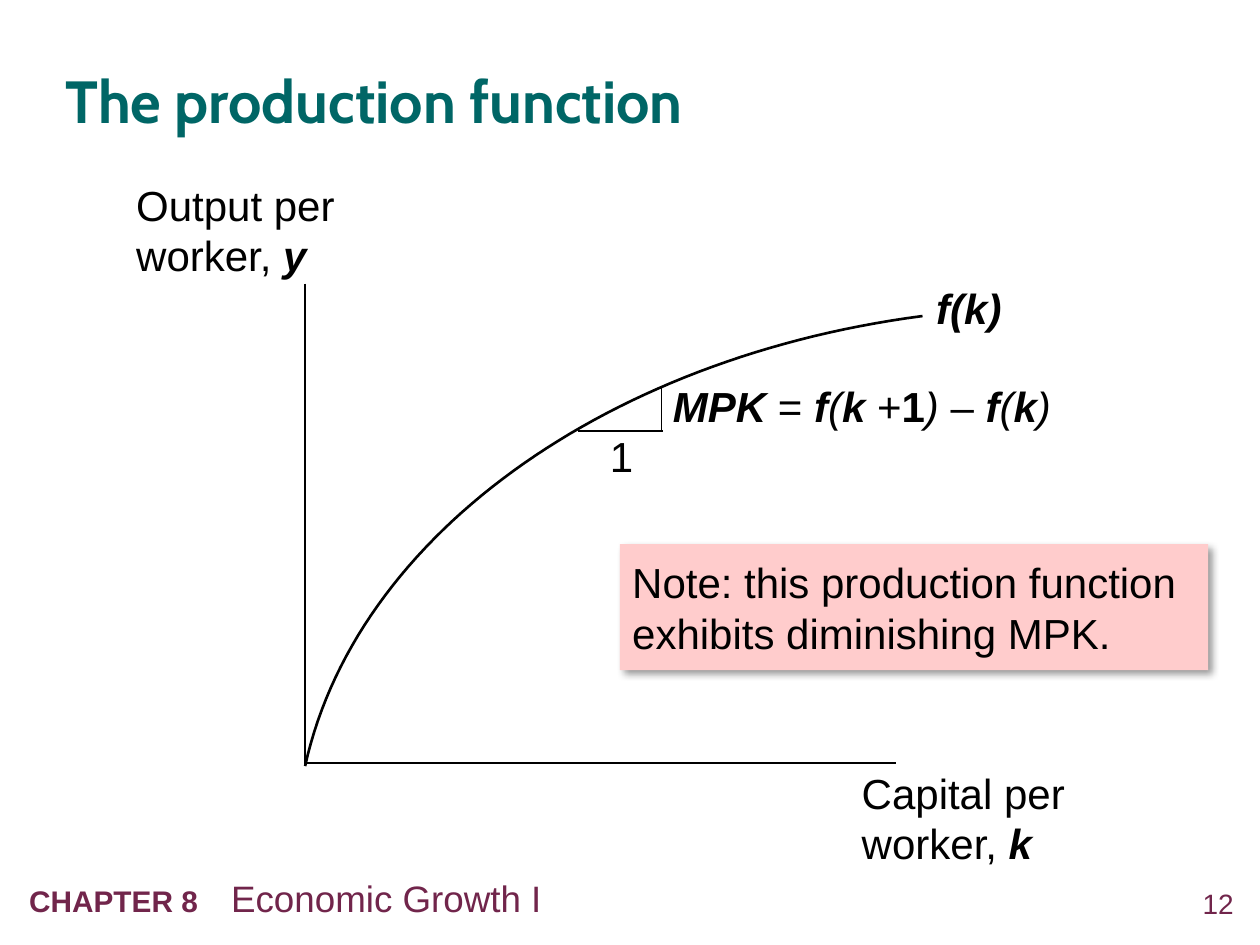
from dataclasses import dataclass

from lxml import etree
from pptx import Presentation
from pptx import util as u
from pptx.dml import color
from pptx.enum import shapes, text
from pptx.oxml import ns


@dataclass(frozen=True)
class Theme:
    ink: str = "000000"
    teal: str = "006666"
    plum: str = "71254B"
    pink: str = "FFCCCC"
    head: str = "Cabin"
    face: str = "Arial"
    title: int = 34
    body: int = 24
    foot: int = 21
    mark: int = 17
    page: int = 16


def rgb(code):
    return color.RGBColor.from_string(code)


def add(node, tag, **attrs):
    return etree.SubElement(node, ns.qn(tag), attrs)


class Deck:
    def __init__(self, theme):
        self.theme = theme
        self.file = Presentation()
        self.file.slide_width = u.Pt(720)
        self.file.slide_height = u.Pt(540)
        self.slide = self.file.slides.add_slide(self.file.slide_layouts[5])

    def run(self, para, words, style="", size=None, tint=None, face=None):
        run = para.add_run()
        run.text = words
        font = run.font
        font.name = face or self.theme.face
        font.size = u.Pt(size or self.theme.body)
        font.bold = "b" in style
        font.italic = "i" in style
        font.color.rgb = rgb(tint or self.theme.ink)

    def frame(self, shape, inset=0, anchor=text.MSO_ANCHOR.MIDDLE):
        frame = shape.text_frame
        frame.word_wrap = True
        frame.auto_size = text.MSO_AUTO_SIZE.NONE
        frame.vertical_anchor = anchor
        frame.margin_left = frame.margin_right = u.Pt(inset)
        frame.margin_top = frame.margin_bottom = u.Pt(inset)
        return frame.paragraphs[0]

    def title(self, words, left, top, width, height):
        shape = self.slide.shapes.title
        shape.left, shape.top = u.Pt(left), u.Pt(top)
        shape.width, shape.height = u.Pt(width), u.Pt(height)
        para = self.frame(shape)
        para.alignment = text.PP_ALIGN.LEFT
        para.line_spacing = 1.05
        theme = self.theme
        self.run(para, words, "b", theme.title, theme.teal, theme.head)

    def box(self, left, top, width, height):
        shape = self.slide.shapes.add_textbox(
            u.Pt(left), u.Pt(top), u.Pt(width), u.Pt(height))
        return self.frame(shape)

    def label(self, lines, left, top, width, height):
        para = self.box(left, top, width, height)
        for index, line in enumerate(lines):
            if index:
                para.add_line_break()
            for words, style in line:
                self.run(para, words, style)

    def line(self, x1, y1, x2, y2):
        link = self.slide.shapes.add_connector(
            shapes.MSO_CONNECTOR.STRAIGHT,
            u.Pt(x1), u.Pt(y1), u.Pt(x2), u.Pt(y2))
        link.line.color.rgb = rgb(self.theme.ink)
        link.line.width = u.Pt(1)
        add(link.element.spPr, "a:effectLst")

    def curve(self, ends, steps=60):
        points = []
        for step in range(steps + 1):
            t = step / steps
            parts = ((1 - t) ** 3, 3 * t * (1 - t) ** 2,
                     3 * t ** 2 * (1 - t), t ** 3)
            points.append(tuple(
                u.Pt(sum(w * c for w, c in zip(parts, axis)))
                for axis in zip(*ends)))
        build = self.slide.shapes.build_freeform(*points[0])
        build.add_line_segments(points[1:], close=False)
        shape = build.convert_to_shape()
        shape.shadow.inherit = False
        shape.fill.background()
        shape.line.color.rgb = rgb(self.theme.ink)
        shape.line.width = u.Pt(1.5)

    def note(self, words, left, top, width, height):
        shape = self.slide.shapes.add_shape(
            shapes.MSO_SHAPE.RECTANGLE,
            u.Pt(left), u.Pt(top), u.Pt(width), u.Pt(height))
        shape.fill.solid()
        shape.fill.fore_color.rgb = rgb(self.theme.pink)
        shape.line.fill.background()
        shape.shadow.inherit = False
        shade = add(shape.element.spPr.find(ns.qn("a:effectLst")),
                    "a:outerShdw", blurRad=str(u.Pt(4)), dist=str(u.Pt(3)),
                    dir="2700000", algn="tl", rotWithShape="0")
        tint = add(shade, "a:srgbClr", val=self.theme.ink)
        add(tint, "a:alpha", val="40000")
        para = self.frame(shape, 7.2, text.MSO_ANCHOR.TOP)
        para.alignment = text.PP_ALIGN.LEFT
        self.run(para, words)

    def footer(self, mark, topic, page):
        theme = self.theme
        para = self.box(16.6, 500.4, 560, 25.2)
        stops = add(para._p.get_or_add_pPr(), "a:tabLst")
        add(stops, "a:tab", pos=str(u.Pt(115.5)), algn="l")
        self.run(para, mark + "\t", "b", theme.mark, theme.plum)
        self.run(para, topic, "", theme.foot, theme.plum)
        para = self.box(665.3, 504.7, 39.6, 23)
        para.alignment = text.PP_ALIGN.RIGHT
        self.run(para, page, "", theme.page, theme.plum)

    def save(self):
        self.file.save("out.pptx")


def main():
    deck = Deck(Theme())
    deck.footer("CHAPTER 8", "Economic Growth I", "12")
    deck.title("The production function", 37.4, 24.5, 494.6, 62.6)

    deck.line(174.4, 162, 174.4, 437)
    deck.line(175.4, 436.2, 511.9, 436.2)
    deck.label([[("Output per ", "")], [("worker, ", ""), ("y", "bi")]],
               77.8, 102.4, 126, 57.6)
    deck.label([[("Capital per ", "")], [("worker, ", ""), ("k", "bi")]],
               492.4, 438.6, 126, 57.6)

    deck.curve([(527.2, 180.6), (345, 204.5), (203, 307.4), (174.4, 437.8)])
    deck.label([[("f(k)", "bi")]], 535, 161.3, 59.8, 28.8)
    deck.note("Note: this production function exhibits diminishing MPK.",
              354.2, 311, 336.2, 72)

    deck.line(330.5, 246.2, 378.7, 246.2)
    deck.line(378, 246.2, 378, 221.8)
    deck.label([[("1", "")]], 348.5, 246.2, 23.8, 28.8)
    deck.label([[("MPK", "bi"), (" = ", ""), ("f", "bi"), ("(", "i"),
                 ("k ", "bi"), ("+", ""), ("1", "b"), (")", "i"),
                 (" – ", ""), ("f", "bi"), ("(", "i"), ("k", "bi"),
                 (")", "i")]], 384.5, 217.4, 245.5, 28.8)
    deck.save()


if __name__ == "__main__":
    main()
